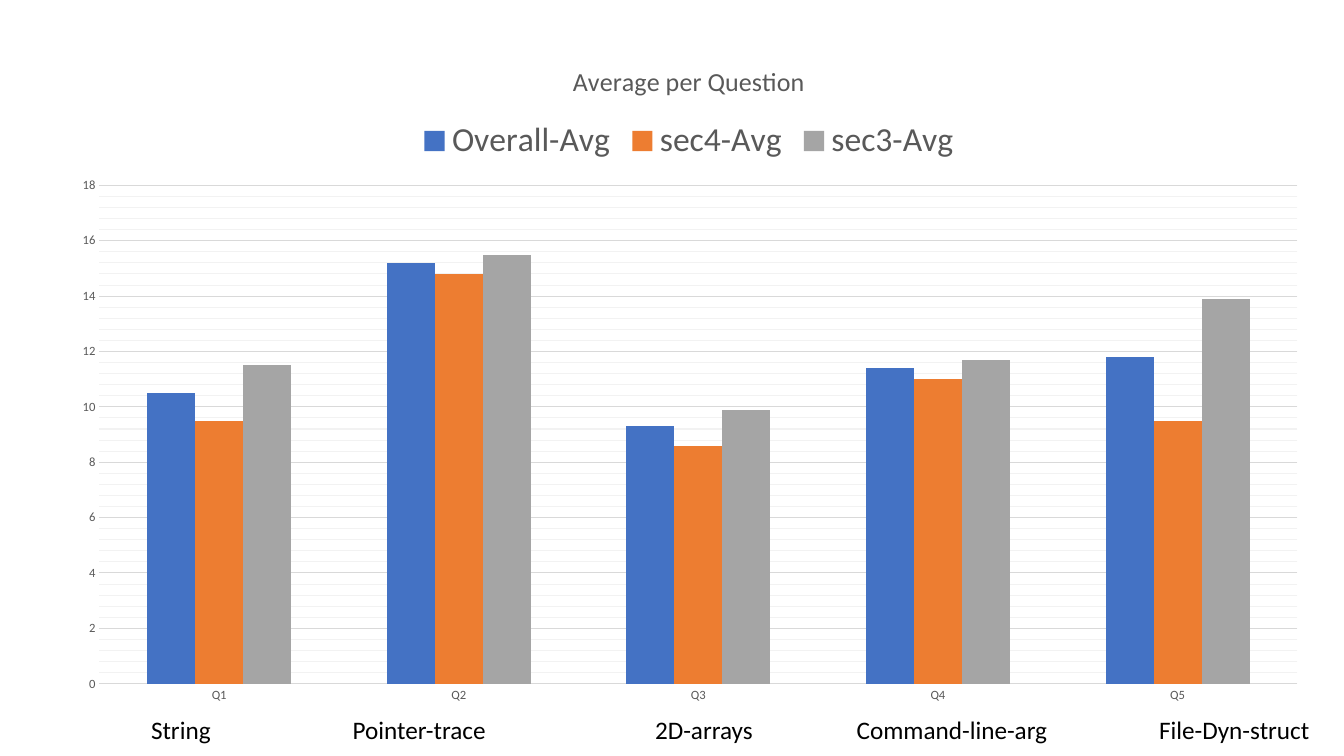
from lxml import etree
from pptx import Presentation
from pptx.chart.data import CategoryChartData
from pptx.dml.color import RGBColor
from pptx.enum.chart import XL_CHART_TYPE, XL_LEGEND_POSITION, XL_TICK_MARK
from pptx.enum.text import MSO_AUTO_SIZE
from pptx.oxml.ns import qn
from pptx.util import Pt

COLUMNS = XL_CHART_TYPE.COLUMN_CLUSTERED
LEGEND_TOP = XL_LEGEND_POSITION.TOP
NO_TICKS = XL_TICK_MARK.NONE
GROW = MSO_AUTO_SIZE.SHAPE_TO_FIT_TEXT

FONT = "Calibri"
BLACK = RGBColor(0x00, 0x00, 0x00)
GREY_TEXT = RGBColor(0x59, 0x59, 0x59)
GRID = RGBColor(0xD9, 0xD9, 0xD9)
FINE_GRID = RGBColor(0xF2, 0xF2, 0xF2)
BLUE = RGBColor(0x44, 0x72, 0xC4)
ORANGE = RGBColor(0xED, 0x7D, 0x31)
GREY = RGBColor(0xA5, 0xA5, 0xA5)

QUESTIONS = ["Q1", "Q2", "Q3", "Q4", "Q5"]
AVERAGES = [
    ("Overall-Avg", BLUE, [10.5, 15.2, 9.3, 11.4, 11.8]),
    ("sec4-Avg", ORANGE, [9.5, 14.8, 8.6, 11, 9.5]),
    ("sec3-Avg", GREY, [11.5, 15.5, 9.9, 11.7, 13.9]),
]
TOPICS = ["String", "Pointer-trace", "2D-arrays", "Command-line-arg", "File-Dyn-struct"]
TOPIC_TABS = [Pt(144), Pt(360), Pt(504), Pt(720)]
PLOT_LAYOUT = {"x": 0.034, "y": 0.216, "w": 0.947, "h": 0.737}


def set_font(font, size, color):
    font.name = FONT
    font.size = Pt(size)
    font.bold = False
    font.color.rgb = color


def set_line(line, color):
    line.color.rgb = color
    line.width = Pt(0.75)


def place_plot(chart):
    """Fix the inner plot area as fractions of the chart."""
    plot_area = chart._chartSpace.chart.plotArea
    for old in plot_area.findall(qn("c:layout")):
        plot_area.remove(old)
    layout = etree.Element(qn("c:layout"))
    manual = etree.SubElement(layout, qn("c:manualLayout"))
    settings = {"layoutTarget": "inner", "xMode": "edge", "yMode": "edge", **PLOT_LAYOUT}
    for name, value in settings.items():
        etree.SubElement(manual, qn(f"c:{name}")).set("val", str(value))
    plot_area.insert(0, layout)


def color_minor_gridlines(axis, color):
    gridlines = axis._element.find(qn("c:minorGridlines"))
    properties = etree.SubElement(gridlines, qn("c:spPr"))
    line = etree.SubElement(properties, qn("a:ln"), w=str(int(Pt(0.75))))
    fill = etree.SubElement(line, qn("a:solidFill"))
    etree.SubElement(fill, qn("a:srgbClr"), val=str(color))


def format_axes(chart):
    for axis in (chart.category_axis, chart.value_axis):
        axis.major_tick_mark = axis.minor_tick_mark = NO_TICKS
        set_font(axis.tick_labels.font, 9, GREY_TEXT)
    set_line(chart.category_axis.format.line, GRID)

    values = chart.value_axis
    values.minimum_scale, values.maximum_scale = 0, 18
    values.major_unit, values.minor_unit = 2, 0.4
    values.has_major_gridlines = values.has_minor_gridlines = True
    set_line(values.major_gridlines.format.line, GRID)
    color_minor_gridlines(values, FINE_GRID)
    values.format.line.fill.background()
    values.tick_labels.number_format = "General"
    values.tick_labels.number_format_is_linked = False


def add_average_chart(page):
    data = CategoryChartData()
    data.categories = QUESTIONS
    for name, _, values in AVERAGES:
        data.add_series(name, values)
    chart = page.shapes.add_chart(COLUMNS, Pt(40.3), Pt(28.1), Pt(903.6), Pt(483.1), data).chart
    set_font(chart.font, 10, BLACK)

    # Title and legend
    chart.has_title = True
    title = chart.chart_title
    title.include_in_layout = False
    title.text_frame.text = "Average per Question"
    set_font(title.text_frame.paragraphs[0].font, 18.6, GREY_TEXT)
    chart.has_legend = True
    chart.legend.position = LEGEND_TOP
    chart.legend.include_in_layout = False
    set_font(chart.legend.font, 24, GREY_TEXT)

    # Columns
    plot = chart.plots[0]
    plot.gap_width = 199
    plot.overlap = 0
    plot.vary_by_categories = False
    for series, (_, color, _) in zip(plot.series, AVERAGES):
        series.format.fill.solid()
        series.format.fill.fore_color.rgb = color

    format_axes(chart)
    place_plot(chart)


def add_topic_row(page):
    box = page.shapes.add_textbox(Pt(100.8), Pt(506.9), Pt(843.1), Pt(29.1))
    frame = box.text_frame
    frame.word_wrap = True
    frame.auto_size = GROW
    para = frame.paragraphs[0]
    para.text = "\t".join(TOPICS)
    tab_list = etree.SubElement(para._p.get_or_add_pPr(), qn("a:tabLst"))
    for position in TOPIC_TABS:
        etree.SubElement(tab_list, qn("a:tab"), pos=str(int(position)), algn="l")
    set_font(para.font, 18, BLACK)


def main():
    deck = Presentation()
    deck.slide_width, deck.slide_height = Pt(960), Pt(540)
    page = deck.slides.add_slide(deck.slide_layouts[6])
    add_average_chart(page)
    add_topic_row(page)
    deck.save("out.pptx")


if __name__ == "__main__":
    main()
